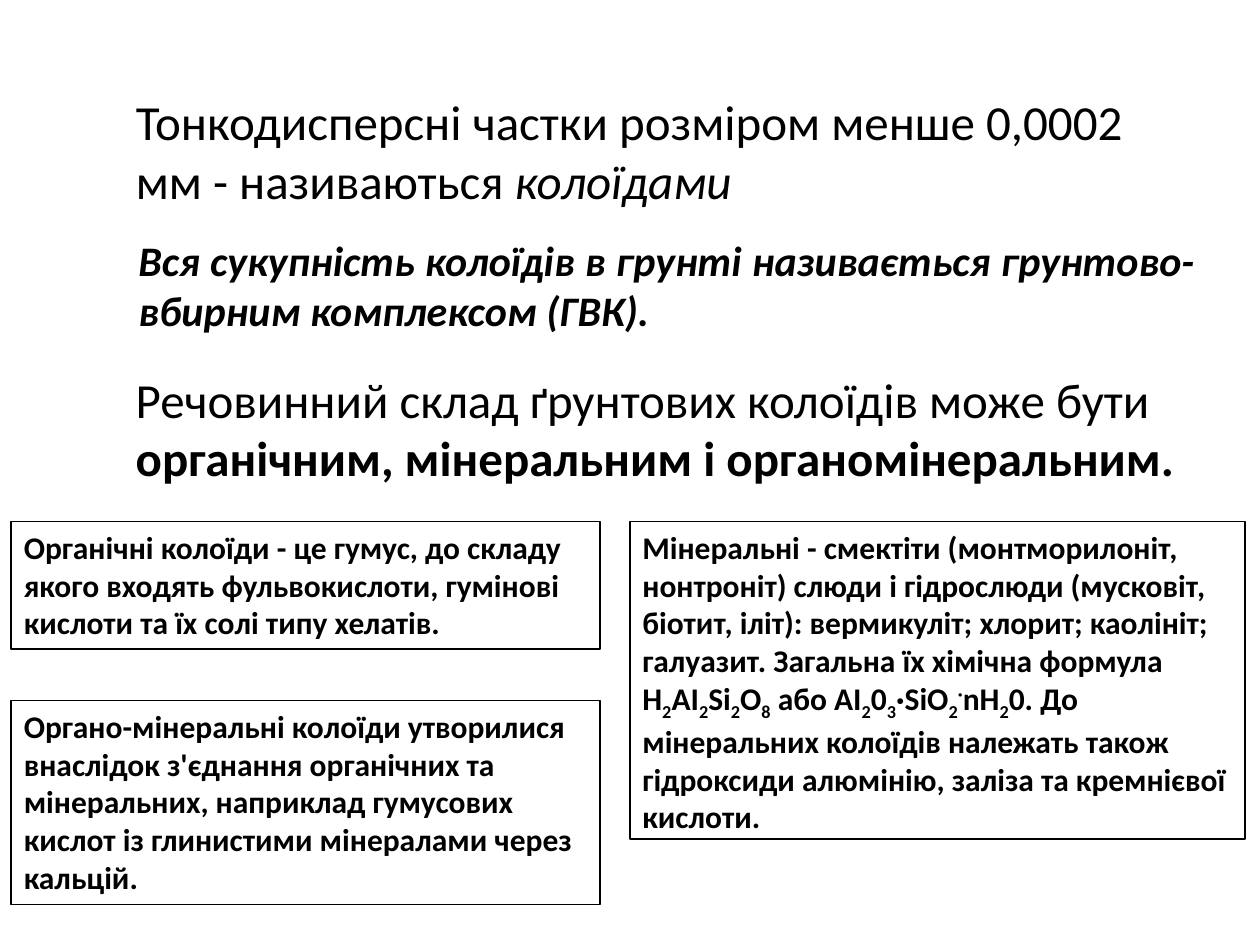
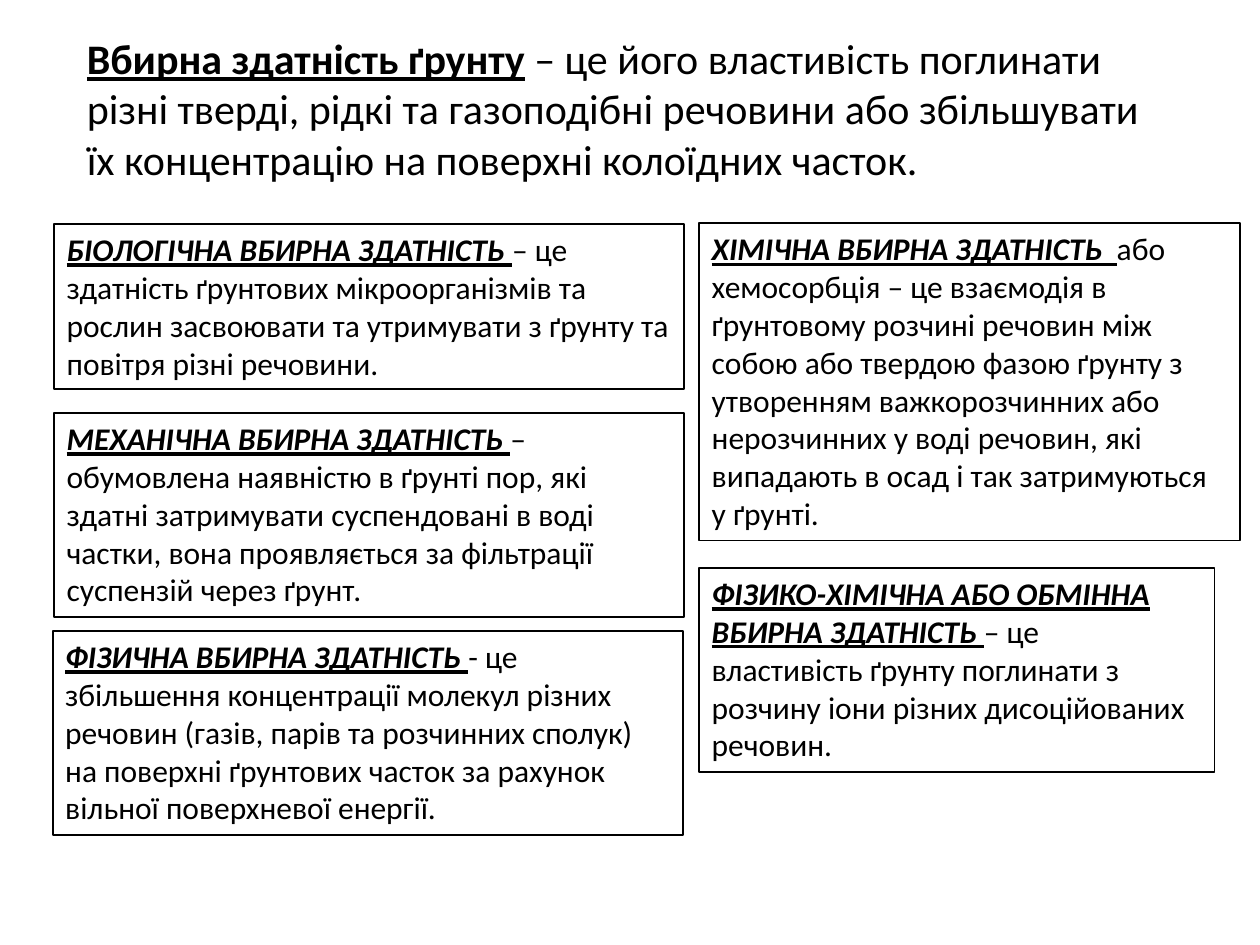
from dataclasses import dataclass

from pptx import Presentation
from pptx.dml.color import RGBColor
from pptx.enum import text
from pptx.slide import Slide
from pptx.util import Pt

COLOURS = {"ink": "000000", "background": "FFFFFF"}
FONT = "Calibri"
BODY_SIZE = 18
FRAME_WIDTH = 1


@dataclass(frozen=True)
class Span:
    wording: str
    bold: bool = False
    italic: bool = False
    underline: bool = False
    baseline: int = 0


Paragraph = tuple[Span, ...]


@dataclass(frozen=True)
class Passage:
    left: float
    top: float
    width: float
    height: float
    paragraphs: tuple[Paragraph, ...]
    size: int = BODY_SIZE
    framed: bool = True
    justified: bool = False


def colour(name: str) -> RGBColor:
    return RGBColor.from_string(COLOURS[name])


def bold(wording: str) -> Span:
    return Span(wording, bold=True)


def subscripted(*parts: str) -> Paragraph:
    return tuple(
        Span(part, bold=True, baseline=-25 if position % 2 else 0)
        for position, part in enumerate(parts)
    )


def definition(term: str, meaning: str, *continuation: str) -> tuple[Paragraph, ...]:
    opening = (Span(term, bold=True, italic=True, underline=True), Span(meaning))
    return (opening, *((Span(line),) for line in continuation))


def draw_passage(slide: Slide, passage: Passage) -> None:
    box = slide.shapes.add_textbox(
        Pt(passage.left), Pt(passage.top), Pt(passage.width), Pt(passage.height)
    )
    if passage.framed:
        box.line.color.rgb = colour("ink")
        box.line.width = Pt(FRAME_WIDTH)
    frame = box.text_frame
    frame.word_wrap = True
    frame.auto_size = text.MSO_AUTO_SIZE.SHAPE_TO_FIT_TEXT
    for position, spans in enumerate(passage.paragraphs):
        paragraph = frame.add_paragraph() if position else frame.paragraphs[0]
        if passage.justified:
            paragraph.alignment = text.PP_ALIGN.JUSTIFY
        for span in spans:
            run = paragraph.add_run()
            run.text = span.wording
            font = run.font
            font.name = FONT
            font.size = Pt(passage.size)
            font.color.rgb = colour("ink")
            font.bold, font.italic = span.bold, span.italic
            font.underline = span.underline
            if span.baseline:
                font._element.set("baseline", str(span.baseline * 1000))


def draw_slide(deck, passages: tuple[Passage, ...]) -> None:
    slide = deck.slides.add_slide(deck.slide_layouts[6])
    slide.background.fill.solid()
    slide.background.fill.fore_color.rgb = colour("background")
    for passage in passages:
        draw_passage(slide, passage)


MINERAL_COLLOIDS = (
    *subscripted(
        "Мінеральні - смектіти (монтморилоніт, нонтроніт) слюди і гідрослюди "
        "(мусковіт, біотит, іліт): вермикуліт; хлорит; каолініт; галуазит. "
        "Загальна їх хімічна формула Н",
        "2", "АІ", "2", "Sі", "2", "О", "8", " або АІ", "2", "0", "3", "·SіО", "2",
    ),
    Span("·", bold=True, baseline=30),
    *subscripted(
        "nН", "2",
        "0. До мінеральних колоїдів належать також гідроксиди алюмінію, "
        "заліза та кремнієвої кислоти.",
    ),
)

COLLOIDS = (
    Passage(70.5, 49, 578, 75, ((
        Span("Тонкодисперсні частки розміром менше 0,0002 мм - називаються "),
        Span("колоїдами", italic=True),
    ),), size=28, framed=False, justified=True),
    Passage(72, 130.3, 618, 65.4, ((
        Span("Вся сукупність колоїдів в грунті називається "
             "грунтово-вбирним комплексом (ГВК). ", bold=True, italic=True),
    ),), size=24, framed=False, justified=True),
    Passage(70.5, 207.4, 618, 75, ((
        Span("Речовинний склад ґрунтових колоїдів може бути "),
        bold("органічним, мінеральним і органомінеральним."),
    ),), size=28, framed=False),
    Passage(6.5, 298, 336.5, 72.7, ((
        bold("Органічні колоїди - це гумус, до складу якого входять "
             "фульвокислоти, гумінові кислоти та їх солі типу хелатів."),
    ),)),
    Passage(360, 298, 351.5, 181.4, (MINERAL_COLLOIDS,)),
    Passage(6.5, 400.3, 336.5, 116.6, ((
        bold("Органо-мінеральні колоїди утворилися внаслідок з'єднання "
             "органічних та мінеральних, наприклад гумусових кислот "
             "із глинистими мінералами через кальцій."),
    ),)),
)

ABSORPTION = (
    Passage(42.5, 15, 635, 94.3, ((
        Span("Вбирна здатність ґрунту", bold=True, underline=True),
        bold(" "),
        Span("– це його властивість поглинати різні тверді, рідкі та "
             "газоподібні речовини або збільшувати їх концентрацію "
             "на поверхні колоїдних часток."),
    ),), size=24, framed=False),
    Passage(31, 128, 360, 94.3, definition(
        "БІОЛОГІЧНА ВБИРНА ЗДАТНІСТЬ ",
        "– це здатність ґрунтових мікроорганізмів та рослин засвоювати "
        "та утримувати з ґрунту та повітря різні речовини.",
    )),
    Passage(31, 236, 360, 116.6, definition(
        "МЕХАНІЧНА ВБИРНА ЗДАТНІСТЬ ",
        "– обумовлена наявністю в ґрунті пор, які здатні затримувати "
        "суспендовані в воді частки, вона проявляється за фільтрації "
        "суспензій через ґрунт.",
    )),
    Passage(30.2, 360.6, 360, 116.6, definition(
        "ФІЗИЧНА ВБИРНА ЗДАТНІСТЬ ",
        "- це збільшення концентрації молекул різних речовин (газів, парів "
        "та розчинних сполук) на поверхні ґрунтових часток за рахунок "
        "вільної поверхневої енергії.",
    )),
    Passage(399.6, 127.5, 309, 181.4, definition(
        "ХІМІЧНА ВБИРНА ЗДАТНІСТЬ  ",
        "або хемосорбція – це взаємодія в ґрунтовому розчині речовин між "
        "собою або твердою фазою ґрунту з утворенням важкорозчинних або "
        "нерозчинних у воді речовин, які випадають в осад і так "
        "затримуються у ґрунті.",
    )),
    Passage(399.6, 324.6, 294.5, 116.6, definition(
        "ФІЗИКО-ХІМІЧНА АБО ОБМІННА ВБИРНА ЗДАТНІСТЬ ",
        "– це",
        "властивість ґрунту поглинати з розчину іони різних "
        "дисоційованих речовин.",
    )),
)


def main() -> None:
    deck = Presentation()
    deck.slide_width, deck.slide_height = Pt(720), Pt(540)
    for passages in (COLLOIDS, ABSORPTION):
        draw_slide(deck, passages)
    deck.save("out.pptx")


if __name__ == "__main__":
    main()
